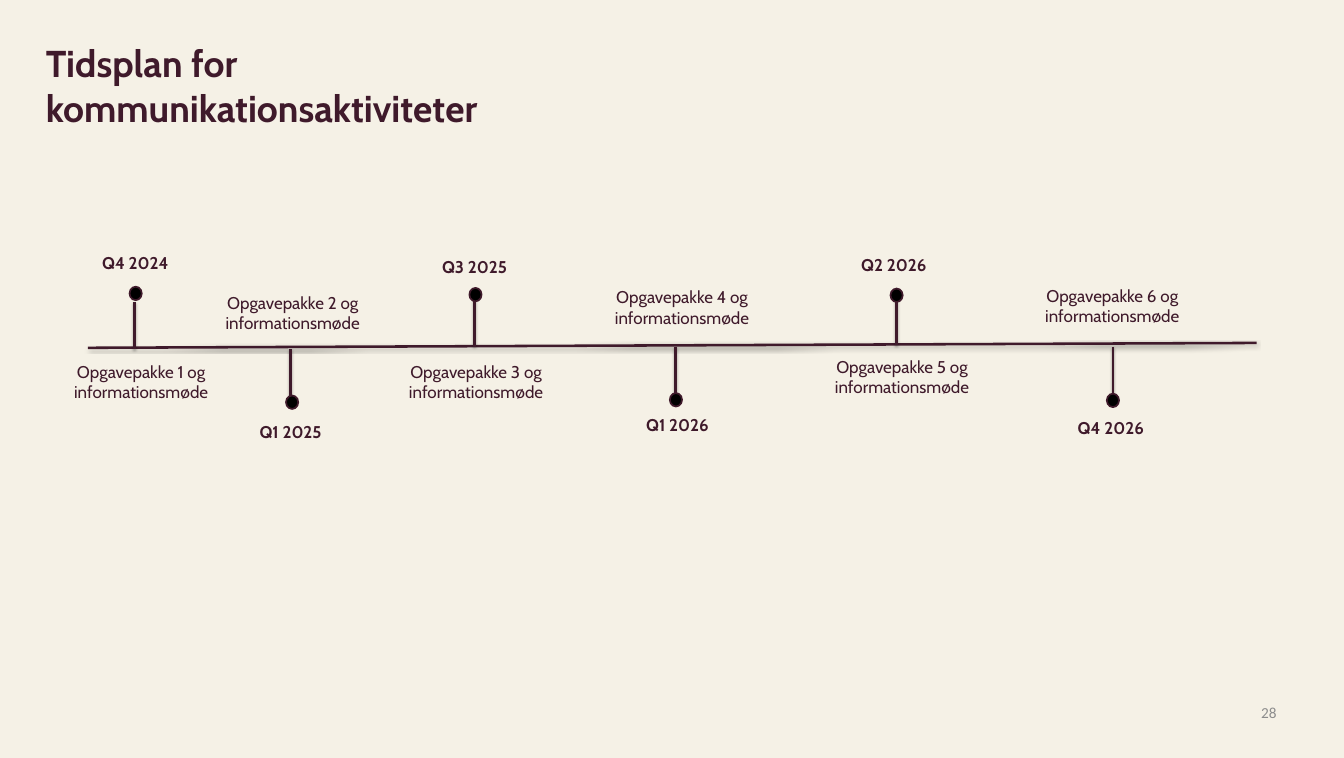
"""Build the timeline slide for communication activities."""
from lxml.etree import SubElement
from pptx import Presentation
from pptx.dml.color import RGBColor as Color
from pptx.enum.shapes import MSO_CONNECTOR as Connector, MSO_SHAPE as Shape
from pptx.enum.text import MSO_ANCHOR as Anchor, MSO_AUTO_SIZE as AutoSize, PP_ALIGN as Align
from pptx.oxml.ns import qn
from pptx.util import Pt

PX = 9144
COLORS = {"paper": "F5F1E6", "plum": "3F1A2B", "dot": "000000", "number": "8C8C8C"}
QUARTER_WIDTH, TASK_WIDTH = 197, 250
STEM_HEIGHT, DOT_WIDTH, DOT_HEIGHT = 77, 20, 22

# quarter, stem (x, top), dot (centre, top), quarter (centre, top), task (centre, top)
MILESTONES = [
    ("Q4 2024", (220, 494), (222, 469), (221, 408), (231, 586)),
    ("Q1 2025", (475, 571), (478, 647), (475, 684), (479, 473)),
    ("Q3 2025", (776, 490), (778, 471), (776, 414), (779, 586)),
    ("Q1 2026", (1105, 567), (1106, 643), (1108, 673), (1116, 464)),
    ("Q2 2026", (1467, 487), (1467, 472), (1462, 411), (1476, 578)),
    ("Q4 2026", (1821, 567), (1821, 644), (1817, 678), (1820, 462)),
]


def write(box, text, size, color="plum", font="Cabin", bold=False, align=Align.CENTER):
    frame = box.text_frame
    frame.word_wrap = True
    frame.auto_size = AutoSize.NONE
    frame.vertical_anchor = Anchor.TOP
    para = frame.paragraphs[0]
    para.text = text
    para.alignment = align
    para.font.name = font
    para.font.size = Pt(size)
    para.font.bold = bold
    para.font.color.rgb = Color.from_string(COLORS[color])


def draw_line(*ends):
    line = page.shapes.add_connector(Connector.STRAIGHT, *(end * PX for end in ends))
    line.line.width = Pt(3)
    line.line.color.rgb = Color.from_string(COLORS["plum"])
    effects = SubElement(line._element.spPr, qn("a:effectLst"))
    shadow = SubElement(effects, qn("a:outerShdw"), blurRad=str(Pt(3.1)),
                        dist=str(Pt(1.8)), dir="5400000", rotWithShape="0")
    black = SubElement(shadow, qn("a:srgbClr"), val="000000")
    SubElement(black, qn("a:alpha"), val="35000")


deck = Presentation()
deck.slide_width, deck.slide_height = 2199 * PX, 1240 * PX
page = deck.slides.add_slide(deck.slide_layouts[5])
page.background.fill.solid()
page.background.fill.fore_color.rgb = Color.from_string(COLORS["paper"])

title = page.shapes.title
title.left, title.top, title.width, title.height = 65 * PX, 61 * PX, 1048 * PX, 158 * PX
write(title, "Tidsplan for\vkommunikationsaktiviteter", 44, bold=True, align=Align.LEFT)

number = page.shapes.add_textbox(1583 * PX, 1150 * PX, 506 * PX, 62 * PX)
frame = number.text_frame
frame.margin_left = frame.margin_top = frame.margin_right = frame.margin_bottom = 0
write(number, "28", 18, "number", "Calibri", align=Align.RIGHT)

draw_line(144, 569, 2056, 561)

for index, (quarter, stem, knob, heading, task) in enumerate(MILESTONES, 1):
    stem_x, stem_top = stem
    draw_line(stem_x, stem_top, stem_x, stem_top + STEM_HEIGHT)

    center, top = knob
    dot = page.shapes.add_shape(Shape.OVAL, (center - DOT_WIDTH // 2) * PX, top * PX,
                                DOT_WIDTH * PX, DOT_HEIGHT * PX)
    dot.shadow.inherit = False
    dot.fill.solid()
    dot.fill.fore_color.rgb = Color.from_string(COLORS["dot"])
    dot.line.color.rgb = Color.from_string(COLORS["plum"])
    dot.line.width = Pt(2)

    labels = [(heading, quarter, QUARTER_WIDTH, 44, True),
              (task, f"Opgavepakke {index} og informationsmøde", TASK_WIDTH, 77, False)]
    for (center, top), text, width, height, bold in labels:
        label = page.shapes.add_textbox((center - width // 2) * PX, top * PX,
                                        width * PX, height * PX)
        write(label, text, 20, bold=bold)

deck.save("out.pptx")
